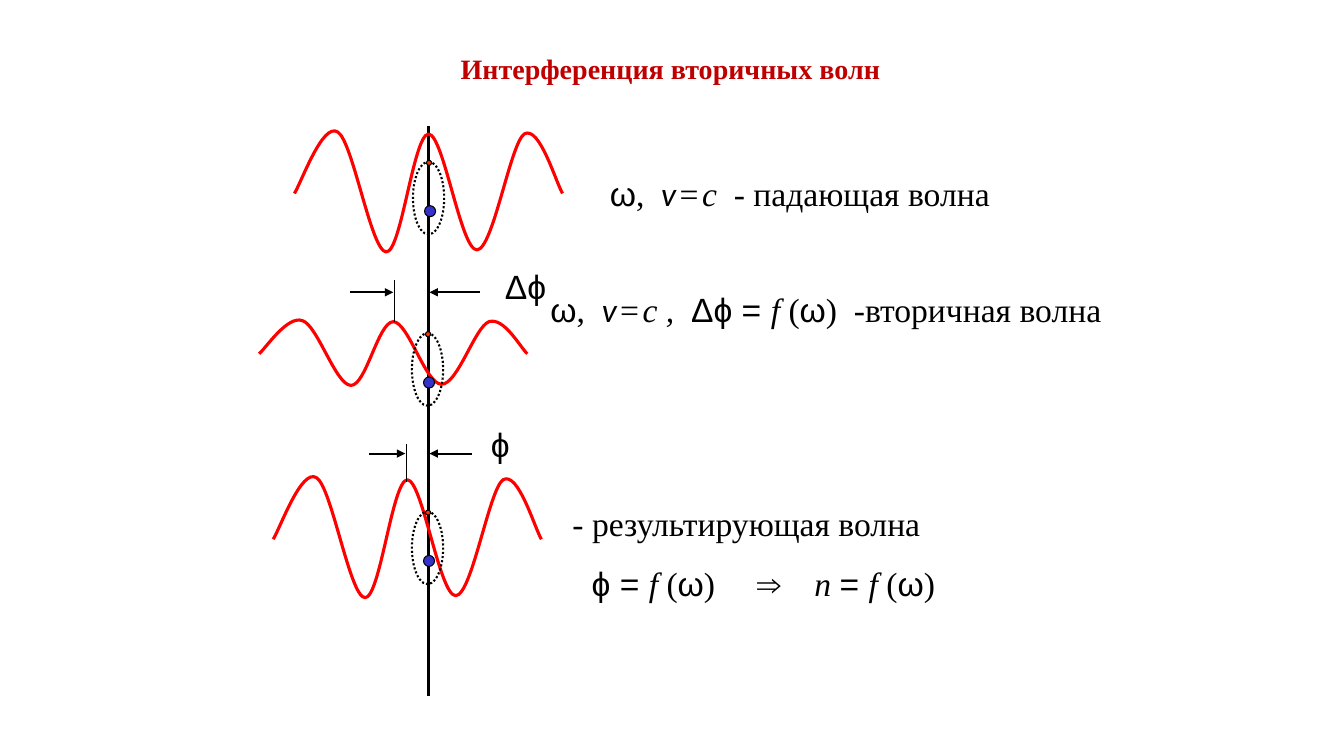
from lxml.etree import SubElement
from pptx import Presentation
from pptx.dml.color import RGBColor
from pptx.enum.dml import MSO_LINE
from pptx.enum.shapes import MSO_CONNECTOR, MSO_SHAPE
from pptx.enum.text import MSO_ANCHOR, MSO_AUTO_SIZE, PP_ALIGN
from pptx.oxml.ns import qn
from pptx.util import Inches, Pt

COLORS = {"ink": "000000", "title": "C00000", "wave": "FF0000",
          "nucleus": "3333CC", "electron": "FF3300"}
SERIF = {"font": "Times New Roman"}
ITALIC = {"font": "Times New Roman", "italic": True}
SANS = {"font": "Arial"}
SMALL = {"font": "Times New Roman", "size": 10}
SPEED = {"font": "Calibri", "italic": True}

FREQUENCY = [("ω", SANS), (",  ", SERIF), ("v", SPEED), (" ", SMALL),
             ("=", SERIF), (" ", SMALL)]
FUNCTION = [("f ", ITALIC), ("(", SERIF), ("ω", SANS)]

TITLE = [[("Интерференция вторичных волн", {"font": "Times New Roman", "bold": True})]]
INCIDENT = [FREQUENCY + [("c  - ", ITALIC), ("падающая волна", SERIF)]]
SECONDARY = [FREQUENCY + [("c ,  ", ITALIC), ("Δϕ = ", SANS)] + FUNCTION
             + [(")  -вторичная волна", SERIF)]]
RESULTING = [
    [("- ", ITALIC), ("результирующая волна", SERIF)],
    [("\tϕ = ", SANS)] + FUNCTION + [(")\t⇒\t", SERIF), ("n ", ITALIC), ("= ", SANS)]
    + FUNCTION + [(")", SERIF)],
]
EQUATION_TABS = [0.19, 1.83, 2.4]

WAVE_POINTS = [
    (0, 0), (0.07, -0.11), (0.28, -0.71), (0.43, -0.61),
    (0.58, -0.52), (0.76, 0.57), (0.91, 0.58),
    (1.06, 0.59), (1.18, -0.58), (1.33, -0.59),
    (1.48, -0.59), (1.65, 0.56), (1.81, 0.56),
    (1.97, 0.56), (2.14, -0.49), (2.28, -0.59),
    (2.43, -0.68), (2.59, -0.12), (2.66, 0),
]

WAVES = [
    {"start": (2.92, 1.92), "scale": 1, "atom": (3.89, 1.81),
     "labels": [(INCIDENT, (5.95, 1.67, 4.33, 0.5), None)]},
    {"start": (2.57, 3.51), "scale": 0.54, "atom": (3.88, 3.51),
     "tick": (3.91, 3.19, 2.78), "arrows": (2.9, [(3.47, 3.9), (4.76, 4.26)]),
     "labels": [([[("Δϕ", SANS)]], (4.91, 2.59, 0.75, 0.5), None),
                (SECONDARY, (5.36, 2.82, 6.09, 0.5), None)]},
    {"start": (2.71, 5.35), "scale": 1, "atom": (3.88, 5.28),
     "tick": (4.03, 4.78, 4.4), "arrows": (4.5, [(3.66, 4.02), (4.68, 4.26)]),
     "labels": [([[("ϕ", SANS)]], (4.77, 4.16, 0.75, 0.5), None),
                (RESULTING, (5.58, 4.94, 4.33, 1.11), EQUATION_TABS)]},
]
ATOM_PARTS = [
    (0, 0, 0.72, 0.31, None, 1.5),
    (0.32, 0.23, 0.11, 0.11, "nucleus", 0.75),
    (0.34, -0.22, 0.05, 0.05, "electron", 0.75),
]


def color(name):
    return RGBColor.from_string(COLORS[name])


def add_text(shapes, paragraphs, box, size=24, ink="ink", align=PP_ALIGN.LEFT,
             anchor=MSO_ANCHOR.TOP, tabs=None, grow=True):
    frame = shapes.add_textbox(*map(Inches, box)).text_frame
    frame.word_wrap = True
    frame.vertical_anchor = anchor
    frame.auto_size = MSO_AUTO_SIZE.SHAPE_TO_FIT_TEXT if grow else MSO_AUTO_SIZE.NONE
    for index, runs in enumerate(paragraphs):
        paragraph = frame.add_paragraph() if index else frame.paragraphs[0]
        paragraph.alignment = align
        if index:
            paragraph.space_before = Pt(14)
        if tabs:
            stops = SubElement(paragraph._p.get_or_add_pPr(), qn("a:tabLst"))
            for position in tabs:
                SubElement(stops, qn("a:tab"), pos=str(Inches(position)), algn="l")
        for text, style in runs:
            run = paragraph.add_run()
            run.text = text
            run.font.name = style["font"]
            run.font.size = Pt(style.get("size", size))
            run.font.italic = style.get("italic", False)
            run.font.bold = style.get("bold", False)
            run.font.color.rgb = color(ink)


def add_line(shapes, start, end, width, arrow=False):
    line = shapes.add_connector(MSO_CONNECTOR.STRAIGHT, *map(Inches, start + end))
    line.line.color.rgb = color("ink")
    line.line.width = Pt(width)
    if arrow:
        SubElement(line.line._get_or_add_ln(), qn("a:tailEnd"), type="triangle")
    SubElement(line._element.spPr, qn("a:effectLst"))


def add_wave(shapes, start, scale):
    points = [(Inches(start[0] + x), Inches(start[1] + y * scale)) for x, y in WAVE_POINTS]
    builder = shapes.build_freeform(*points[0])
    builder.add_line_segments(points[1:], close=False)
    shape = builder.convert_to_shape()
    shape.shadow.inherit = False
    shape.fill.background()
    shape.line.color.rgb = color("wave")
    shape.line.width = Pt(2.25)
    outline = shape._element.spPr.find(".//" + qn("a:path"))
    segments = outline.findall(qn("a:lnTo"))
    for first in range(0, len(segments), 3):
        curve = SubElement(outline, qn("a:cubicBezTo"))
        for segment in segments[first:first + 3]:
            curve.append(segment[0])
            outline.remove(segment)


def add_atom(shapes, left, top):
    for dx, dy, width, height, fill, line_width in ATOM_PARTS:
        shape = shapes.add_shape(MSO_SHAPE.OVAL, *map(Inches, (left + dx, top + dy, width, height)))
        shape.rotation = 90
        shape.shadow.inherit = False
        shape.line.color.rgb = color("ink")
        shape.line.width = Pt(line_width)
        if fill:
            shape.fill.solid()
            shape.fill.fore_color.rgb = color(fill)
        else:
            shape.fill.background()
            shape.line.dash_style = MSO_LINE.ROUND_DOT


def main():
    presentation = Presentation()
    presentation.slide_width = Inches(13.33)
    presentation.slide_height = Inches(7.5)
    slide = presentation.slides.add_slide(presentation.slide_layouts[6])
    add_line(slide.shapes, (4.25, 1.25), (4.25, 6.9), 2.25)
    for wave in WAVES:
        shapes = slide.shapes.add_group_shape().shapes
        add_wave(shapes, wave["start"], wave["scale"])
        add_atom(shapes, *wave["atom"])
        if "tick" in wave:
            x, bottom, top = wave["tick"]
            add_line(shapes, (x, bottom), (x, top), 0.75)
            y, spans = wave["arrows"]
            for tail, tip in spans:
                add_line(shapes, (tail, y), (tip, y), 1.5, arrow=True)
        for paragraphs, box, tabs in wave["labels"]:
            add_text(shapes, paragraphs, box, tabs=tabs)
    add_text(slide.shapes, TITLE, (2.4, 0.37, 8.5, 0.62), size=20, ink="title",
             align=PP_ALIGN.CENTER, anchor=MSO_ANCHOR.MIDDLE, grow=False)
    presentation.save("out.pptx")


if __name__ == "__main__":
    main()
